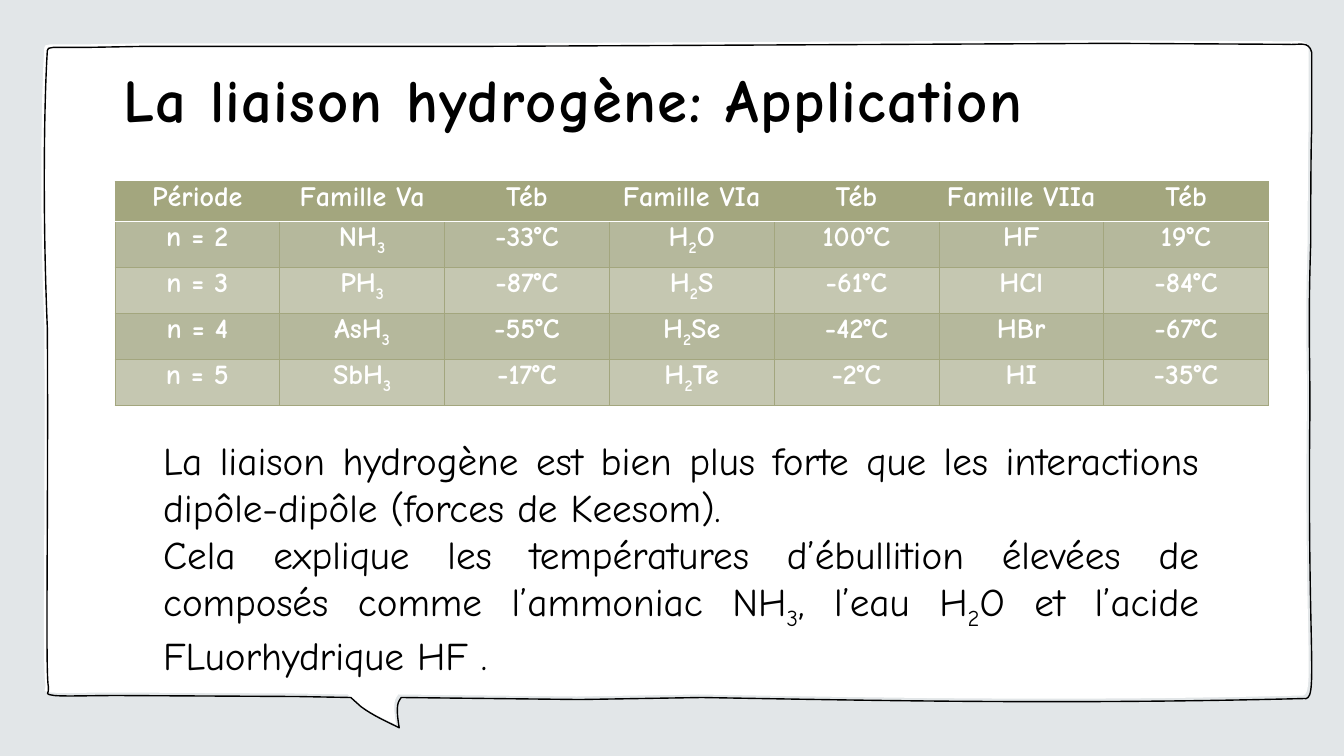
from copy import deepcopy
from lxml.etree import SubElement
from pptx import Presentation
from pptx.dml.color import RGBColor
from pptx.enum.text import MSO_ANCHOR, PP_ALIGN
from pptx.oxml import parse_xml
from pptx.oxml.ns import nsdecls, qn
from pptx.util import Inches, Pt

COLORS = {"backdrop": "E2E6E8", "paper": "FFFFFF", "ink": "000000",
          "olive": "A3A67E", "dark_band": "B5B89C", "light_band": "C5C7B1"}
FONT = "Comic Neue"
NO_STYLE = "{2D5ABB26-0587-4C30-8999-92F81FD0307C}"
SUBSCRIPT = "-25000"
SLIDE_W, SLIDE_H = 13.33, 7.5

BUBBLE_START = (10.99, 0.4)
BUBBLE = [
    (12.73, 0.41), (12.86, 0.42, 12.95, 0.37, 12.98, 0.49), (12.98, 0.76),
    (12.98, 0.93, 12.98, 1.1, 12.98, 1.27), (12.97, 1.4, 12.97, 2.33, 12.97, 2.39),
    (12.94, 3.27, 12.97, 3.63, 12.96, 4.22), (12.94, 6.54, 13.05, 6.93, 12.9, 6.9),
    (10.53, 6.96, 8.69, 6.92, 6.93, 6.89), (5.72, 6.91), (3.95, 6.89), (3.93, 6.92),
    (3.9, 6.97, 3.91, 7.07, 3.93, 7.19), (3.81, 7.13, 3.67, 7.07, 3.55, 6.98),
    (3.45, 6.89), (2.92, 6.88), (1.14, 6.87), (0.86, 6.87, 0.63, 6.88, 0.51, 6.87),
    (0.4, 6.85, 0.46, 6.87, 0.45, 6.78), (0.42, 6.63, 0.45, 5.19, 0.44, 3.23),
    (0.39, 2.04, 0.41, 0.93, 0.44, 0.47), (0.45, 0.46, 0.45, 0.45, 0.45, 0.45),
    (0.5, 0.44), (0.74, 0.44), (0.86, 0.44), (1.4, 0.43), (4.77, 0.43), (10.99, 0.4),
]

TITLE = "La liaison hydrogène: Application"
HEADINGS = ["Période", "Famille Va", "Téb", "Famille VIa", "Téb", "Famille VIIa", "Téb"]
BOILING_POINTS = [
    ["n = 2", "NH_3", "-33°C", "H_2_O", "100°C", "HF", "19°C"],
    ["n = 3", "PH_3", "-87°C", "H_2_S", "-61°C", "HCl", "-84°C"],
    ["n = 4", "AsH_3", "-55°C", "H_2_Se", "-42°C", "HBr", "-67°C"],
    ["n = 5", "SbH_3", "-17°C", "H_2_Te", "-2°C", "HI", "-35°C"],
]
EXPLANATION = [
    "La liaison hydrogène est bien plus forte que les interactions "
    "dipôle-dipôle (forces de Keesom). ",
    "Cela explique les températures d’ébullition élevées de composés comme "
    "l’ammoniac NH_3_, l’eau H_2_O et l’acide FLuorhydrique HF .",
]


def color(name):
    """Return the named palette colour."""
    return RGBColor.from_string(COLORS[name])


def write(paragraph, formula, size, ink, bold=False):
    """Add runs to a paragraph; every second part between underscores is a subscript."""
    for order, part in enumerate(formula.split("_")):
        run = paragraph.add_run()
        run.text = part
        run.font.name, run.font.size, run.font.bold = FONT, Pt(size), bold
        run.font.color.rgb = color(ink)
        if order % 2:
            run.font._element.set("baseline", SUBSCRIPT)


def add_bubble(slide, shift):
    """Draw the hand-drawn speech bubble, with its curves, moved right and down by a shift."""
    start, *ends = [(Inches(x + shift), Inches(y + shift))
                    for x, y in [BUBBLE_START] + [step[-2:] for step in BUBBLE]]
    builder = slide.shapes.build_freeform(*start, scale=1.0)
    builder.add_line_segments(ends, close=False)
    bubble = builder.convert_to_shape()
    bubble.shadow.inherit = False
    outline = bubble._element.find(".//" + qn("a:path"))
    for line, step in zip(outline.findall(qn("a:lnTo")), BUBBLE):
        if len(step) == 6:
            curve = parse_xml(f'<a:cubicBezTo {nsdecls("a")}/>')
            for x, y in zip(step[::2], step[1::2]):
                point = SubElement(curve, qn("a:pt"))
                point.set("x", str(Inches(x + shift) - bubble.left))
                point.set("y", str(Inches(y + shift) - bubble.top))
            outline.replace(line, curve)
    SubElement(outline, qn("a:close"))
    return bubble


def add_background(slide):
    """Fill the backdrop and lay the white bubble under its offset outline."""
    slide.background.fill.solid()
    slide.background.fill.fore_color.rgb = color("backdrop")
    paper = add_bubble(slide, 0)
    paper.fill.solid()
    paper.fill.fore_color.rgb = color("paper")
    paper.line.fill.background()
    outline = add_bubble(slide, 0.03)
    outline.fill.background()
    outline.line.color.rgb = color("ink")
    outline.line.width = Pt(1)


def place_title(slide, box):
    """Format the title placeholder and bring it above the bubble."""
    title = slide.shapes.title
    title.left, title.top, title.width, title.height = map(Inches, box)
    slide.shapes._spTree.append(title._element)
    frame = title.text_frame
    frame.word_wrap = True
    frame.vertical_anchor = MSO_ANCHOR.MIDDLE
    heading = frame.paragraphs[0]
    heading.alignment = PP_ALIGN.LEFT
    heading.line_spacing = 0.9
    write(heading, TITLE, 43.2, "ink", True)
    lettering = heading.runs[0].font._element
    lettering.set("spc", "100")
    heading.add_line_break()
    heading._p.find(qn("a:br")).append(deepcopy(lettering))
    closing = SubElement(heading._p, qn("a:endParaRPr"), dict(lettering.attrib))
    closing.extend(deepcopy(list(lettering)))


def set_borders(cell, borders):
    """Give a cell its borders, listed as side, colour and width."""
    properties = cell._tc.get_or_add_tcPr()
    for order, (side, name, width) in enumerate(borders):
        border = parse_xml(f'<a:ln{side} {nsdecls("a")} w="{Pt(width)}"/>')
        fill = SubElement(border, qn("a:solidFill"))
        SubElement(fill, qn("a:srgbClr")).set("val", COLORS[name])
        properties.insert(order, border)


def add_boiling_table(slide, box, header_height):
    """Lay out the table of boiling points on an even grid."""
    left, top, width, height = box
    rows = [HEADINGS] + BOILING_POINTS
    body_height = (height - header_height) / len(BOILING_POINTS)
    table = slide.shapes.add_table(len(rows), len(HEADINGS), *map(Inches, box)).table
    table._tbl.tblPr.find(qn("a:tableStyleId")).text = NO_STYLE
    for column in table.columns:
        column.width = Inches(width / len(HEADINGS))
    for r, entries in enumerate(rows):
        table.rows[r].height = Inches(body_height if r else header_height)
        band = ("dark_band" if r % 2 else "light_band") if r else "olive"
        for c, entry in enumerate(entries):
            cell = table.cell(r, c)
            cell.margin_left = cell.margin_right = Inches(0.07)
            cell.margin_top = cell.margin_bottom = 0
            cell.fill.solid()
            cell.fill.fore_color.rgb = color(band)
            sides = [(side, "olive", 0.5) for side in "LRTB"]
            if r == 0:
                sides[3] = ("B", "paper", 1)
            elif r == 1:
                sides[2] = ("T", "paper", 1)
            set_borders(cell, sides)
            paragraph = cell.text_frame.paragraphs[0]
            paragraph.alignment = PP_ALIGN.CENTER
            write(paragraph, entry, 20, "paper", True)


def add_explanation(slide, box):
    """Write the justified paragraphs below the table."""
    frame = slide.shapes.add_textbox(*map(Inches, box)).text_frame
    frame.word_wrap = True
    for order, sentence in enumerate(EXPLANATION):
        paragraph = frame.add_paragraph() if order else frame.paragraphs[0]
        paragraph.alignment = PP_ALIGN.JUSTIFY
        write(paragraph, sentence, 28, "ink")


def main():
    """Build the slide and save it."""
    deck = Presentation()
    deck.slide_width, deck.slide_height = Inches(SLIDE_W), Inches(SLIDE_H)
    slide = deck.slides.add_slide(deck.slide_layouts[5])
    add_background(slide)
    place_title(slide, (1.12, 0.61, 11.3, 1.55))
    add_boiling_table(slide, (1.14, 1.8, 11.44, 2.22), 0.4)
    add_explanation(slide, (1.52, 4.28, 10.47, 2.42))
    deck.save("out.pptx")


if __name__ == "__main__":
    main()
